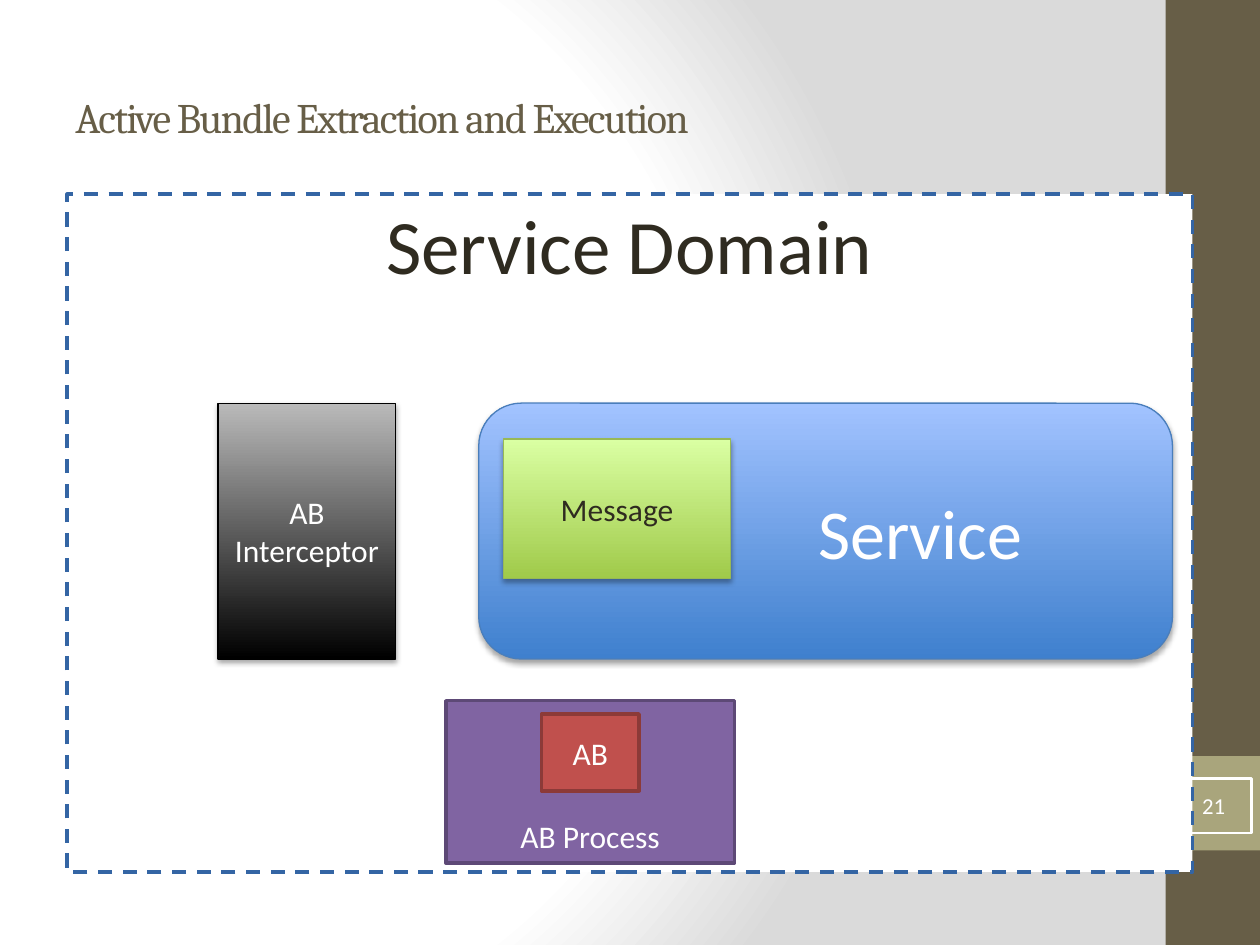
from lxml.etree import SubElement
from pptx import Presentation
from pptx.dml.color import RGBColor
from pptx.enum.dml import MSO_LINE
from pptx.enum.shapes import MSO_SHAPE
from pptx.enum.text import MSO_ANCHOR, PP_ALIGN
from pptx.oxml import parse_xml
from pptx.oxml.ns import nsdecls, qn
from pptx.util import Pt

BROWN = RGBColor(0x67, 0x5E, 0x47)
OLIVE = RGBColor(0xA9, 0xA5, 0x7C)
DARK = RGBColor(0x2F, 0x2B, 0x20)
WHITE = RGBColor(0xFF, 0xFF, 0xFF)
BLACK = RGBColor(0x00, 0x00, 0x00)
BORDER_BLUE = RGBColor(0x34, 0x65, 0xA4)
BLUE_LINE = RGBColor(0x4A, 0x7E, 0xBB)
BLUE_FILL = (RGBColor(0x3F, 0x80, 0xCE), RGBColor(0xA2, 0xC3, 0xFF))
BLACK_FILL = (BLACK, RGBColor(0xBA, 0xBA, 0xBA))
GREEN_LINE = RGBColor(0x98, 0xB9, 0x55)
GREEN_FILL = (RGBColor(0xA0, 0xCA, 0x4A), RGBColor(0xDA, 0xFF, 0xA3))
PURPLE = RGBColor(0x80, 0x64, 0xA2)
PURPLE_LINE = RGBColor(0x5D, 0x49, 0x76)
RED = RGBColor(0xC0, 0x50, 0x4D)
RED_LINE = RGBColor(0x8C, 0x3A, 0x38)

TITLE = "Active Bundle Extraction and Execution"
TITLE_BOX = (36, 21.6, 600, 90)

# Back to front; a pair of colours as fill is a bottom-to-top gradient
SHAPES = [
    dict(box=(666, 0, 54, 540), fill=BROWN),
    dict(box=(666, 432, 54, 54), fill=OLIVE),
    dict(box=(672, 445, 43, 31), line=WHITE, width=1.5, text="21", size=13),
    dict(box=(38.4, 110.9, 643, 387.4), fill=WHITE, line=BORDER_BLUE, width=2,
         dashed=True, text="Service Domain", size=44, color=DARK,
         anchor=MSO_ANCHOR.TOP, insets=(0, 2, 0, 0)),
    dict(box=(273.6, 230.4, 396.4, 146.2), kind=MSO_SHAPE.ROUNDED_RECTANGLE,
         fill=BLUE_FILL, line=BLUE_LINE, text="Service", size=40,
         insets=(108, 0, 0, 0)),
    dict(box=(124.6, 230.4, 101.5, 146.2), fill=BLACK_FILL, line=BLACK,
         text="AB Interceptor"),
    dict(box=(254.9, 400.4, 164.8, 92.9), fill=PURPLE, line=PURPLE_LINE, width=2,
         text="AB Process", anchor=MSO_ANCHOR.BOTTOM, insets=(0, 0, 0, 5)),
    dict(box=(309.5, 408, 55.7, 44), fill=RED, line=RED_LINE, width=2, text="AB"),
    dict(box=(287.8, 250.8, 129.6, 80), fill=GREEN_FILL, line=GREEN_LINE,
         text="Message", color=DARK),
]

BACKGROUND = f"""<p:bg {nsdecls('p', 'a')}><p:bgPr>
<a:gradFill rotWithShape="1"><a:gsLst>
<a:gs pos="0"><a:srgbClr val="FFFFFF"/></a:gs>
<a:gs pos="75000"><a:srgbClr val="FFFFFF"/></a:gs>
<a:gs pos="100000"><a:srgbClr val="DADADA"/></a:gs></a:gsLst>
<a:path path="circle"><a:fillToRect l="20000" t="50000" r="100000" b="50000"/></a:path>
</a:gradFill><a:effectLst/></p:bgPr></p:bg>"""


def add_run(paragraph, text, font, size, color):
    run = paragraph.add_run()
    run.text = text
    run.font.name = font
    run.font.size = Pt(size)
    run.font.color.rgb = color
    return run


def add_shadow(shape):
    effects = shape._element.spPr.find(qn("a:effectLst"))
    shadow = SubElement(effects, qn("a:outerShdw"), blurRad=str(Pt(3)),
                        dist=str(Pt(1.8)), dir="5400000", rotWithShape="0")
    color = SubElement(shadow, qn("a:srgbClr"), val="000000")
    SubElement(color, qn("a:alpha"), val="35000")


def add_block(slide, box, kind=MSO_SHAPE.RECTANGLE, fill=None, line=None,
              width=0.75, dashed=False, text=None, size=18, color=WHITE,
              anchor=MSO_ANCHOR.MIDDLE, insets=(0, 0, 0, 0)):
    shape = slide.shapes.add_shape(kind, *map(Pt, box))
    shape.shadow.inherit = False

    # Fill
    if fill is None:
        shape.fill.background()
    elif isinstance(fill, RGBColor):
        shape.fill.solid()
        shape.fill.fore_color.rgb = fill
    else:
        shape.fill.gradient()
        shape.fill.gradient_angle = 90
        for stop, stop_color in zip(shape.fill.gradient_stops, fill):
            stop.color.rgb = stop_color
        add_shadow(shape)

    # Outline
    if line is None:
        shape.line.fill.background()
    else:
        shape.line.color.rgb = line
        shape.line.width = Pt(width)
        if dashed:
            shape.line.dash_style = MSO_LINE.DASH

    # Label
    if text:
        frame = shape.text_frame
        frame.word_wrap = True
        frame.vertical_anchor = anchor
        (frame.margin_left, frame.margin_top,
         frame.margin_right, frame.margin_bottom) = map(Pt, insets)
        paragraph = frame.paragraphs[0]
        paragraph.alignment = PP_ALIGN.CENTER
        add_run(paragraph, text, "Calibri", size, color)


def main():
    presentation = Presentation()
    presentation.slide_width = Pt(720)
    presentation.slide_height = Pt(540)
    slide = presentation.slides.add_slide(presentation.slide_layouts[6])
    slide._element.cSld.insert(0, parse_xml(BACKGROUND))

    # Title
    frame = slide.shapes.add_textbox(*map(Pt, TITLE_BOX)).text_frame
    frame.word_wrap = True
    frame.vertical_anchor = MSO_ANCHOR.MIDDLE
    run = add_run(frame.paragraphs[0], TITLE, "Cambria", 24, BROWN)
    run.font._element.set("spc", "-100")

    # Side bar, page number and diagram
    for block in SHAPES:
        add_block(slide, **block)

    presentation.save("out.pptx")


if __name__ == "__main__":
    main()
